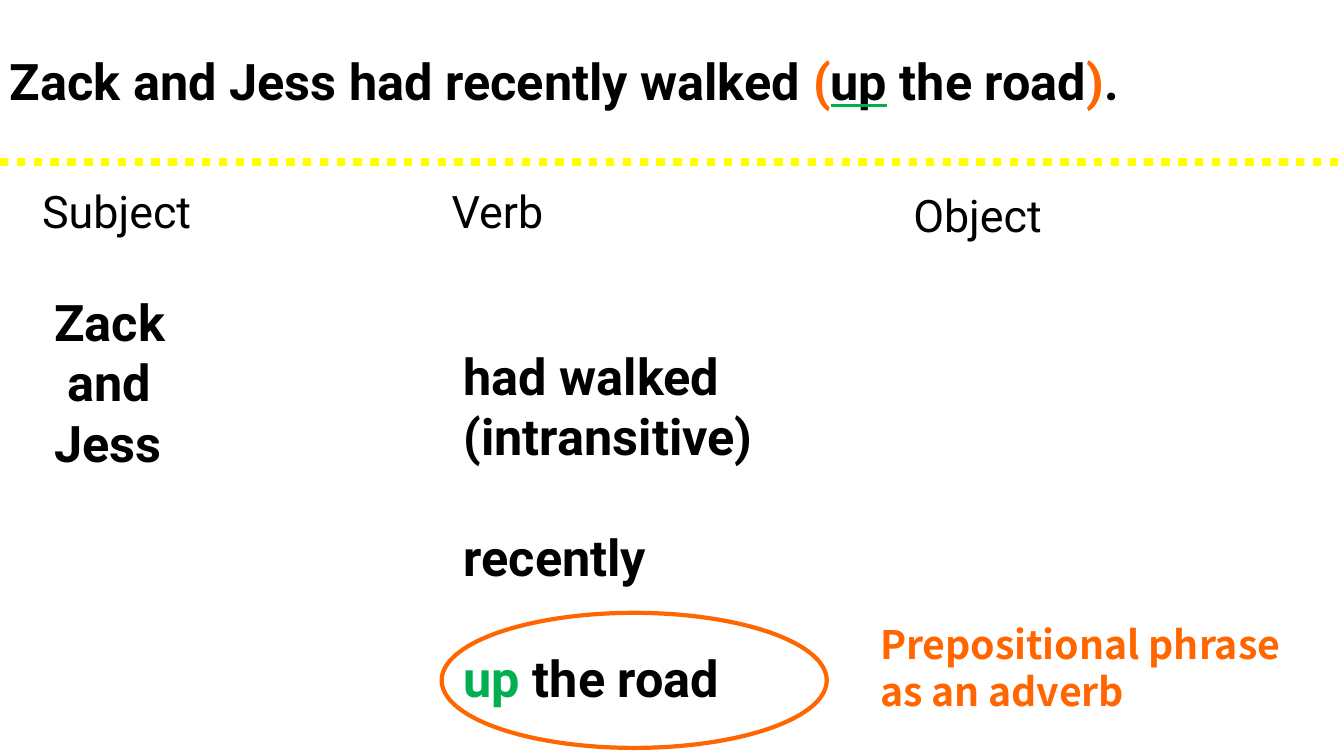
from dataclasses import dataclass

from lxml import etree
from pptx import Presentation
from pptx.dml.color import RGBColor
from pptx.enum.dml import MSO_LINE_DASH_STYLE as Dash
from pptx.enum.shapes import MSO_CONNECTOR, MSO_SHAPE
from pptx.oxml.ns import qn
from pptx.slide import Slide
from pptx.util import Inches, Pt

COLORS = {"black": "000000", "orange": "FF6600", "green": "00B050", "yellow": "FFFF00"}
WIDTH, HEIGHT = 13.33, 7.5
SMALL_LINE, LARGE_LINE = 38.4, 43.2  # line heights of 32 and 36 pt text, in points


@dataclass(frozen=True)
class Span:
    text: str
    color: str = "black"
    underline: str = ""


@dataclass(frozen=True)
class Para:
    spans: tuple[Span, ...]
    size: int = 36
    bold: bool = True
    font: str = "Roboto"
    before: float = 0
    indent: float = 0


@dataclass(frozen=True)
class Box:
    left: float
    top: float
    width: float
    height: float
    paras: tuple[Para, ...]


def heading(text: str) -> Para:
    return Para((Span(text),), size=32, bold=False)


def entry(text: str, before: float = 0, indent: float = 0.12) -> Para:
    return Para((Span(text),), before=before, indent=indent)


BOXES = (
    Box(0.32, 1.77, 4.16, 4.81, (
        heading("Subject"),
        entry("Zack", before=SMALL_LINE),
        entry("and", indent=0.25),
        entry("Jess"),
    )),
    Box(4.38, 1.77, 4.48, 5.65, (
        heading("Verb"),
        entry("had walked", before=2 * SMALL_LINE),
        entry("(intransitive)"),
        entry("recently", before=LARGE_LINE),
        Para((Span("up", "green"), Span(" the road")), before=LARGE_LINE, indent=0.12),
    )),
    Box(8.96, 1.81, 4.16, 3.47, (heading("Object"),)),
    Box(0, 0.45, WIDTH, 0.71, (
        Para((
            Span("Zack and Jess had recently walked "),
            Span("(", "orange"),
            Span("up", underline="green"),
            Span(" the road"),
            Span(")", "orange"),
            Span("."),
        )),
    )),
    Box(8.63, 6.1, 4.39, 1.04, (
        Para((Span("Prepositional phrase as an adverb", "orange"),),
             size=28, font="Noto Sans CJK JP"),
    )),
)


def rgb(name: str) -> RGBColor:
    return RGBColor.from_string(COLORS[name])


def color_underline(run, color: str) -> None:
    """Underline a run in a colour other than that of its text."""
    run.font.underline = True
    underline_fill = etree.Element(qn("a:uFill"))
    solid = etree.SubElement(underline_fill, qn("a:solidFill"))
    etree.SubElement(solid, qn("a:srgbClr"), val=COLORS[color])
    run.font._element.find(qn("a:solidFill")).addnext(underline_fill)


def add_box(page: Slide, box: Box) -> None:
    shape = page.shapes.add_textbox(
        Inches(box.left), Inches(box.top), Inches(box.width), Inches(box.height))
    frame = shape.text_frame
    frame.word_wrap = True
    for index, para in enumerate(box.paras):
        paragraph = frame.add_paragraph() if index else frame.paragraphs[0]
        if para.indent:
            paragraph._p.get_or_add_pPr().set("marL", str(Inches(para.indent)))
        if para.before:
            paragraph.space_before = Pt(para.before)
        font = paragraph.font
        font.name, font.size, font.bold = para.font, Pt(para.size), para.bold
        for span in para.spans:
            run = paragraph.add_run()
            run.text = span.text
            run.font.color.rgb = rgb(span.color)
            if span.underline:
                color_underline(run, span.underline)


def add_divider(page: Slide) -> None:
    divider = page.shapes.add_connector(
        MSO_CONNECTOR.STRAIGHT, 0, Inches(1.61), Inches(WIDTH), Inches(1.61))
    divider.line.color.rgb = rgb("yellow")
    divider.line.width = Pt(6)
    divider.line.dash_style = Dash.ROUND_DOT
    etree.SubElement(divider._element.spPr, qn("a:effectLst"))


def add_phrase_ring(page: Slide) -> None:
    ring = page.shapes.add_shape(
        MSO_SHAPE.OVAL, Inches(4.38), Inches(6.08), Inches(3.82), Inches(1.34))
    ring.shadow.inherit = False
    ring.fill.background()
    ring.line.color.rgb = rgb("orange")
    ring.line.width = Pt(3)


def main() -> None:
    deck = Presentation()
    deck.slide_width, deck.slide_height = Inches(WIDTH), Inches(HEIGHT)
    page = deck.slides.add_slide(deck.slide_layouts[6])
    for box in BOXES:
        add_box(page, box)
    add_divider(page)
    add_phrase_ring(page)
    deck.save("out.pptx")


if __name__ == "__main__":
    main()
